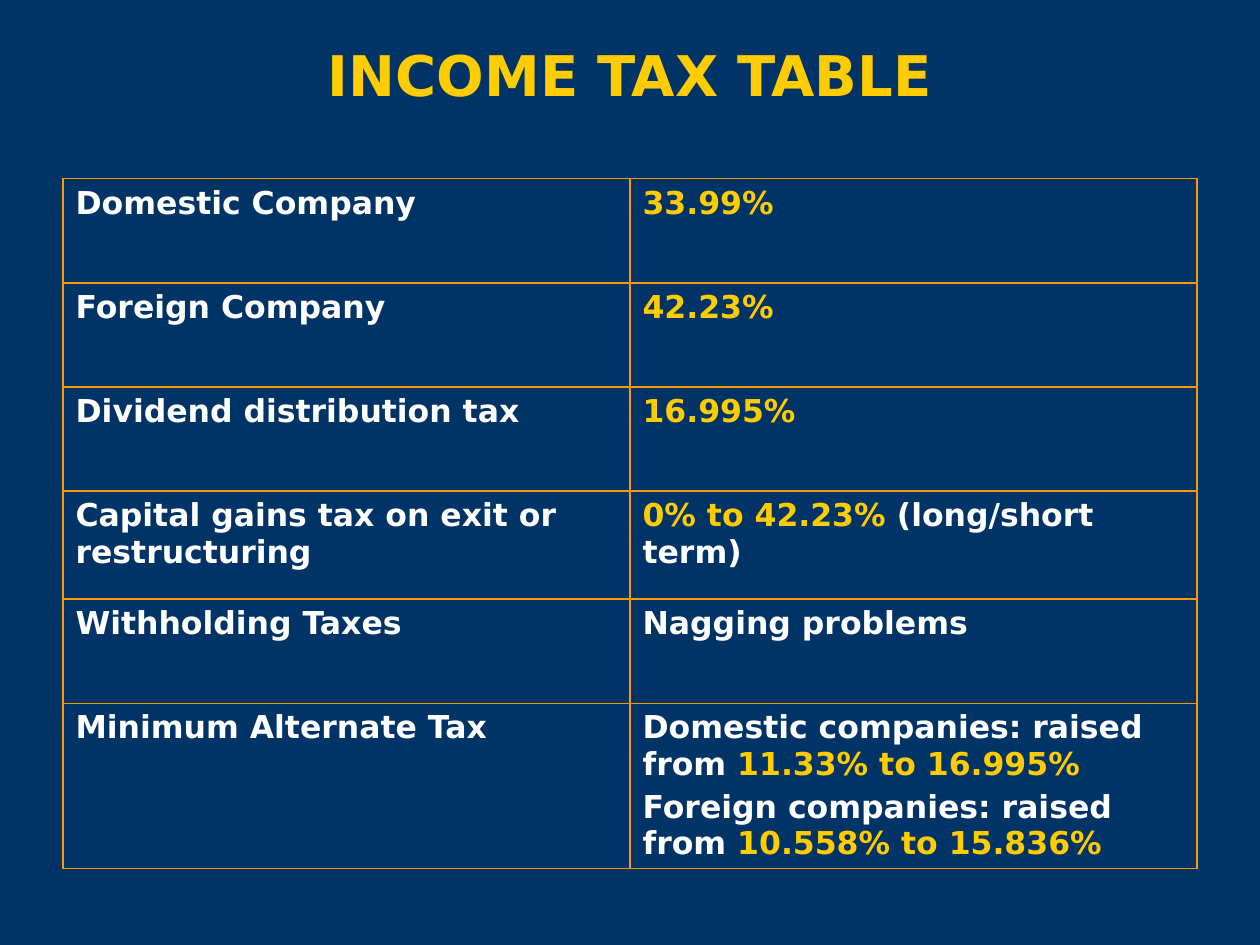
from dataclasses import dataclass

from lxml import etree
from pptx import Presentation
from pptx import util as u
from pptx.dml.color import RGBColor
from pptx.enum import text
from pptx.oxml import ns


@dataclass(frozen=True)
class Theme:
    background: str = "003366"
    body: str = "FFFFFF"
    accent: str = "FFCC00"
    border: str = "FF9900"
    font: str = "DejaVu Sans"
    title_size: int = 32
    body_size: int = 18
    border_width: int = 1


THEME = Theme()
PLAIN, RATE = THEME.body, THEME.accent

# Each cell is a list of paragraphs, each paragraph a list of (text, colour).
TAX_ROWS = [
    ([[("Domestic Company", PLAIN)]], [[("33.99%", RATE)]]),
    ([[("Foreign Company", PLAIN)]], [[("42.23%", RATE)]]),
    ([[("Dividend distribution tax", PLAIN)]], [[("16.995%", RATE)]]),
    ([[("Capital gains tax on exit or restructuring", PLAIN)]],
     [[("0% to 42.23%", RATE), (" (long/short term)", PLAIN)]]),
    ([[("Withholding Taxes", PLAIN)]], [[("Nagging problems", PLAIN)]]),
    ([[("Minimum Alternate Tax", PLAIN)]],
     [[("Domestic companies: raised from ", PLAIN), ("11.33% to 16.995%", RATE)],
      [("Foreign companies: raised from ", PLAIN), ("10.558% to 15.836%", RATE)]]),
]
ROW_HEIGHTS = [2.1, 2.1, 2.1, 2.18, 2.1, 2.1]


def set_values(target, values):
    for name, value in values.items():
        setattr(target, name, value)


def add_run(paragraph, words, size, colour):
    run = paragraph.add_run()
    run.text = words
    set_values(run.font, {"name": THEME.font, "size": u.Pt(size), "bold": True})
    run.font.color.rgb = RGBColor.from_string(colour)


def format_title(title, words):
    set_values(title, {"left": u.Cm(1.27), "top": u.Cm(0.43),
                       "width": u.Cm(22.86), "height": u.Cm(2.11)})
    set_values(title.text_frame, {"vertical_anchor": text.MSO_ANCHOR.MIDDLE,
                                  "word_wrap": True})
    paragraph = title.text_frame.paragraphs[0]
    paragraph.alignment = text.PP_ALIGN.CENTER
    add_run(paragraph, words, THEME.title_size, THEME.accent)


def add_borders(cell):
    properties = cell._tc.get_or_add_tcPr()
    for side in ("lnL", "lnR", "lnT", "lnB"):
        line = etree.SubElement(properties, ns.qn(f"a:{side}"),
                                w=str(u.Pt(THEME.border_width)))
        fill = etree.SubElement(line, ns.qn("a:solidFill"))
        etree.SubElement(fill, ns.qn("a:srgbClr"), val=THEME.border)


def fill_cell(cell, paragraphs):
    add_borders(cell)
    cell.fill.background()
    frame = cell.text_frame
    for index, runs in enumerate(paragraphs):
        paragraph = frame.add_paragraph() if index else frame.paragraphs[0]
        paragraph.space_before = u.Pt(0.2 * THEME.body_size)
        for words, colour in runs:
            add_run(paragraph, words, THEME.body_size, colour)


def add_tax_table(slide):
    frame = slide.shapes.add_table(len(TAX_ROWS), 2, u.Cm(1.27), u.Cm(3.6),
                                   u.Cm(22.86), u.Cm(sum(ROW_HEIGHTS)))
    table = frame.table
    set_values(table, {"first_row": False, "horz_banding": False})
    for row, height, contents in zip(table.rows, ROW_HEIGHTS, TAX_ROWS):
        row.height = u.Cm(height)
        for cell, paragraphs in zip(row.cells, contents):
            fill_cell(cell, paragraphs)


def main():
    presentation = Presentation()
    set_values(presentation, {"slide_width": u.Cm(25.4), "slide_height": u.Cm(19.05)})
    slide = presentation.slides.add_slide(presentation.slide_layouts[5])
    slide.background.fill.solid()
    slide.background.fill.fore_color.rgb = RGBColor.from_string(THEME.background)
    format_title(slide.shapes.title, "INCOME TAX TABLE")
    add_tax_table(slide)
    presentation.save("out.pptx")


if __name__ == "__main__":
    main()
